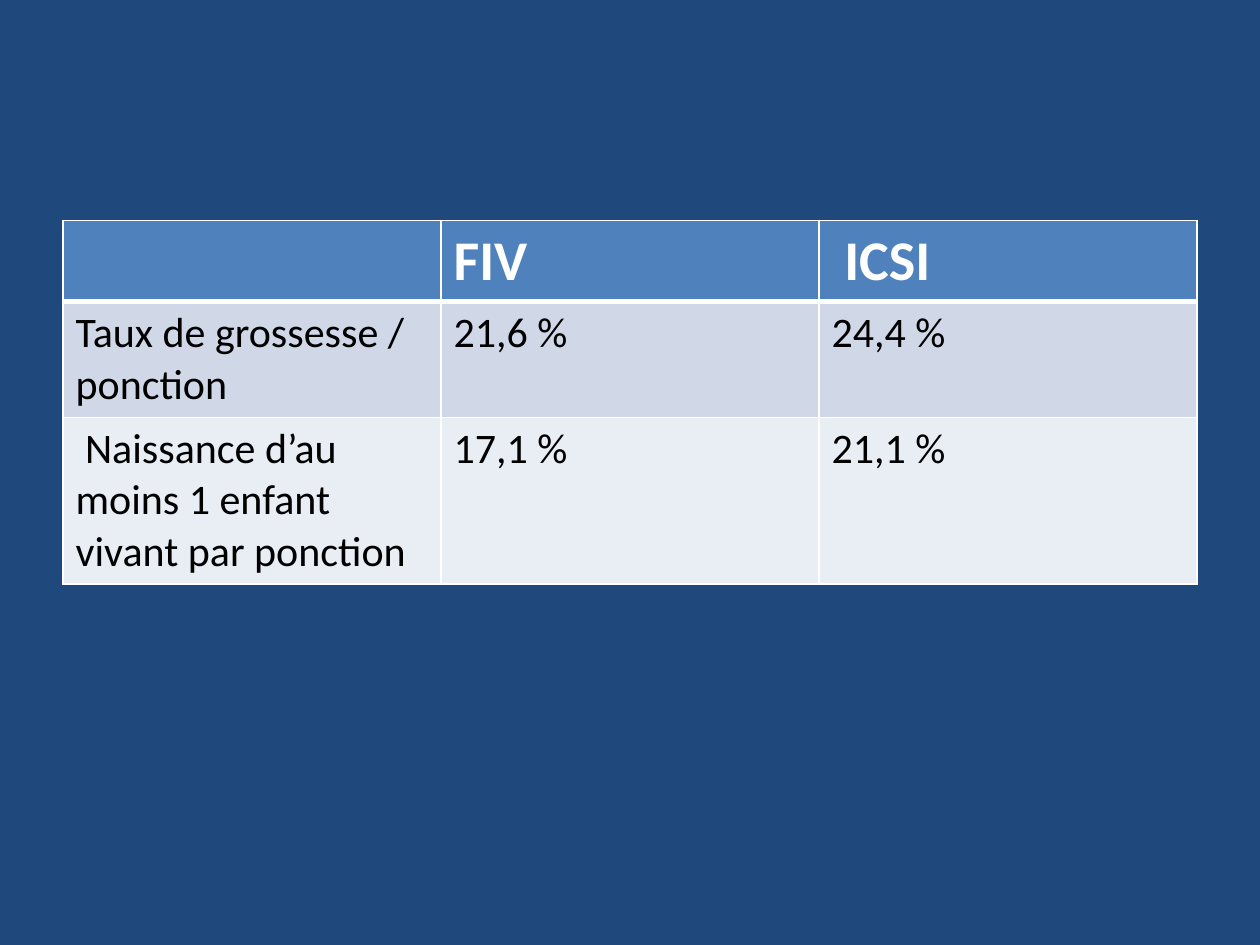
from lxml.etree import SubElement
from pptx import Presentation
from pptx.dml.color import RGBColor
from pptx.oxml.ns import qn
from pptx.util import Inches, Pt

WIDTH, HEIGHT = Inches(10), Inches(7.5)
MARGIN = 0.05
TABLE_TOP = 1.75 / 7.5
ROW_HEIGHTS = [0.63, 0.92, 1.32]
ROW_FILLS = ["4F81BD", "D0D8E8", "E9EDF4"]
RATES = [
    ["", "FIV", " ICSI"],
    ["Taux de grossesse / ponction", "21,6 %", "24,4 %"],
    [" Naissance d’au moins 1 enfant vivant par ponction", "17,1 %", "21,1 %"],
]


def color(value):
    return RGBColor.from_string(value)


def paint(fill, value):
    fill.solid()
    fill.fore_color.rgb = color(value)


def add_borders(cell, widths):
    properties = cell._tc.get_or_add_tcPr()
    for side, width in zip("LRTB", widths):
        line = SubElement(properties, qn(f"a:ln{side}"), w=str(Pt(width)))
        solid = SubElement(line, qn("a:solidFill"))
        SubElement(solid, qn("a:srgbClr"), val="FFFFFF")


def fill_cell(cell, text, row):
    header = row == 0
    add_borders(cell, [1, 1, 3 if row == 1 else 1, 3 if header else 1])
    paint(cell.fill, ROW_FILLS[row])
    cell.text = text
    font = cell.text_frame.paragraphs[0].font
    font.name = "Calibri"
    font.size = Pt(32 if header else 24)
    font.bold = header
    font.color.rgb = color("FFFFFF" if header else "000000")


def add_rate_table(page):
    frame = page.shapes.add_table(
        len(RATES), len(RATES[0]),
        int(WIDTH * MARGIN), int(HEIGHT * TABLE_TOP),
        int(WIDTH * (1 - 2 * MARGIN)), Inches(sum(ROW_HEIGHTS)),
    )
    table = frame.table
    for row, (height, texts) in enumerate(zip(ROW_HEIGHTS, RATES)):
        table.rows[row].height = Inches(height)
        for column, text in enumerate(texts):
            fill_cell(table.cell(row, column), text, row)


def main():
    deck = Presentation()
    deck.slide_width, deck.slide_height = WIDTH, HEIGHT
    page = deck.slides.add_slide(deck.slide_layouts[6])
    paint(page.background.fill, "1F497D")
    add_rate_table(page)
    deck.save("out.pptx")


if __name__ == "__main__":
    main()
